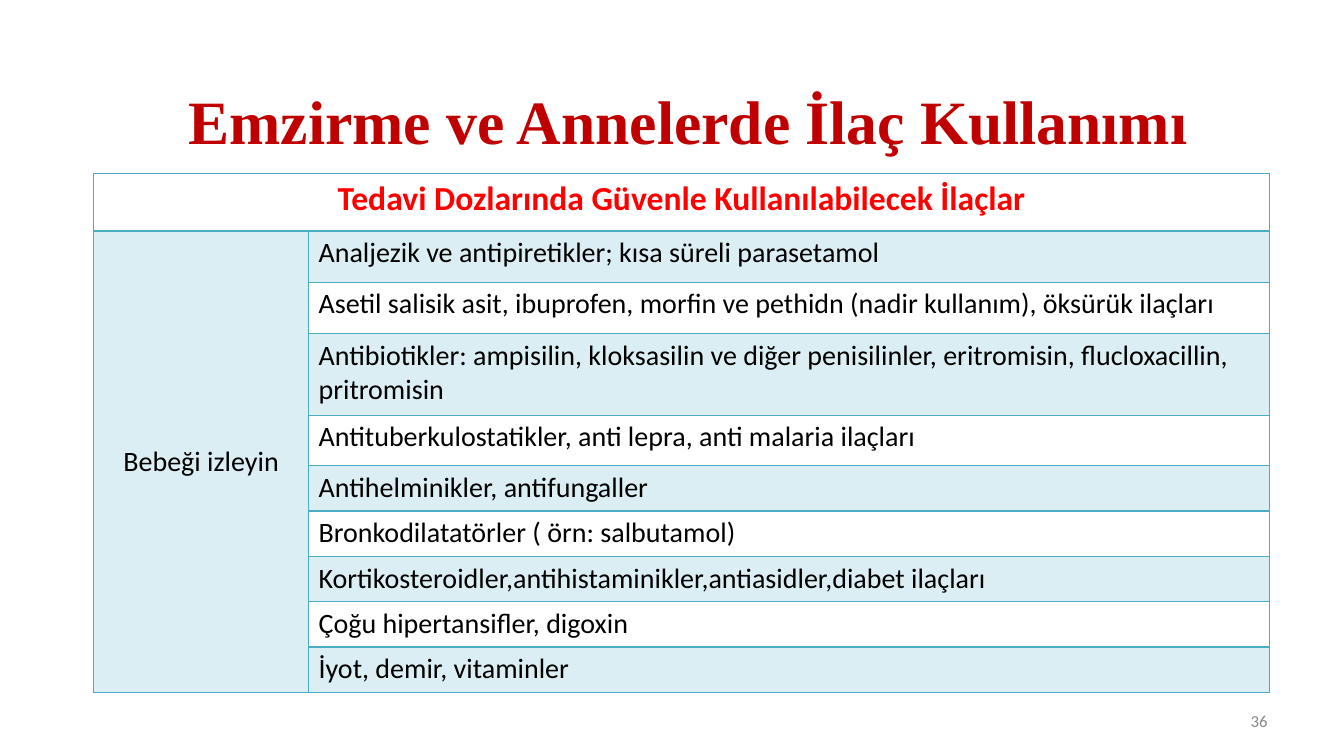
import pptx
import pptx.dml.color
import pptx.enum.text
import pptx.oxml
import pptx.oxml.ns
import pptx.util

Inches = pptx.util.Inches
ALIGN = pptx.enum.text.PP_ALIGN
ANCHOR = pptx.enum.text.MSO_ANCHOR

TEAL, PALE_TEAL = "4BACC6", "DBEEF4"
HEADING = "Tedavi Dozlarında Güvenle Kullanılabilecek İlaçlar"
ADVICE = "Bebeği izleyin"
DRUGS = [
    ("Analjezik ve antipiretikler; kısa süreli parasetamol", 0.51),
    ("Asetil salisik asit, ibuprofen, morfin ve pethidn (nadir kullanım), öksürük ilaçları", 0.51),
    ("Antibiotikler: ampisilin, kloksasilin ve diğer penisilinler, eritromisin, "
     "flucloxacillin, pritromisin", 0.81),
    ("Antituberkulostatikler, anti lepra, anti malaria ilaçları", 0.5),
    ("Antihelminikler, antifungaller", 0.45),
    ("Bronkodilatatörler ( örn: salbutamol)", 0.45),
    ("Kortikosteroidler,antihistaminikler,antiasidler,diabet ilaçları", 0.45),
    ("Çoğu hipertansifler, digoxin", 0.45),
    ("İyot, demir, vitaminler", 0.45),
]


def rgb(color):
    return pptx.dml.color.RGBColor.from_string(color)


def write(frame, text, size, color, align=ALIGN.LEFT, font="Calibri", bold=False):
    frame.text = text
    frame.word_wrap = True
    paragraph = frame.paragraphs[0]
    paragraph.alignment = align
    paragraph.font.size = pptx.util.Pt(size)
    paragraph.font.name = font
    paragraph.font.bold = bold
    paragraph.font.color.rgb = rgb(color)


def place(shape, left, top, width, height):
    shape.left, shape.top = Inches(left), Inches(top)
    shape.width, shape.height = Inches(width), Inches(height)


def add_title(slide, box):
    title = slide.shapes.title
    place(title, *box)
    title.text_frame.vertical_anchor = ANCHOR.MIDDLE
    write(title.text_frame, "Emzirme ve Annelerde İlaç Kullanımı", 44, "C00000",
          ALIGN.CENTER, "Times New Roman", True)


def add_page_number(slide, box):
    number = slide.shapes.add_textbox(*map(Inches, box))
    number.text_frame.vertical_anchor = ANCHOR.MIDDLE
    write(number.text_frame, "36", 12, "898989", ALIGN.RIGHT)


def set_borders(cell, top=1, bottom=1):
    properties = cell._tc.get_or_add_tcPr()
    for side, points in (("L", 1), ("R", 1), ("T", top), ("B", bottom)):
        properties.append(pptx.oxml.parse_xml(
            f'<a:ln{side} {pptx.oxml.ns.nsdecls("a")} w="{pptx.util.Pt(points)}">'
            f'<a:solidFill><a:srgbClr val="{TEAL}"/></a:solidFill></a:ln{side}>'))


def set_fill(cell, shaded):
    if shaded:
        cell.fill.solid()
        cell.fill.fore_color.rgb = rgb(PALE_TEAL)
    else:
        cell.fill.background()


def add_drug_table(slide, box):
    heights = [0.57] + [height for _, height in DRUGS]
    table = slide.shapes.add_table(len(heights), 2, *map(Inches, box)).table
    table.first_row = table.horz_banding = False
    advice_width = 2.13
    table.columns[0].width = Inches(advice_width)
    table.columns[1].width = Inches(box[2] - advice_width)

    # Row heights, borders and banding
    for index, height in enumerate(heights):
        table.rows[index].height = Inches(height)
        for column in range(2):
            cell = table.cell(index, column)
            set_borders(cell, top=2 if index == 1 else 1, bottom=2 if index == 0 else 1)
            set_fill(cell, index > 0 and (column == 0 or index % 2 == 1))

    # Heading across both columns
    heading = table.cell(0, 0)
    heading.merge(table.cell(0, 1))
    write(heading.text_frame, HEADING, 24, "FF0000", ALIGN.CENTER, bold=True)

    # Advice beside all drug groups
    advice = table.cell(1, 0)
    advice.merge(table.cell(len(DRUGS), 0))
    advice.vertical_anchor = ANCHOR.MIDDLE
    write(advice.text_frame, ADVICE, 20, "000000", ALIGN.CENTER)

    for index, (drug, _) in enumerate(DRUGS, start=1):
        write(table.cell(index, 1).text_frame, drug, 20, "000000")


def main():
    prs = pptx.Presentation()
    prs.slide_width, prs.slide_height = Inches(13.33), Inches(7.5)
    slide = prs.slides.add_slide(prs.slide_layouts[5])
    add_title(slide, (0.83, 0.56, 12, 1.25))
    add_page_number(slide, (9.56, 6.95, 3.11, 0.4))
    add_drug_table(slide, (0.93, 1.72, 11.66, 5.16))
    prs.save("out.pptx")


if __name__ == "__main__":
    main()
